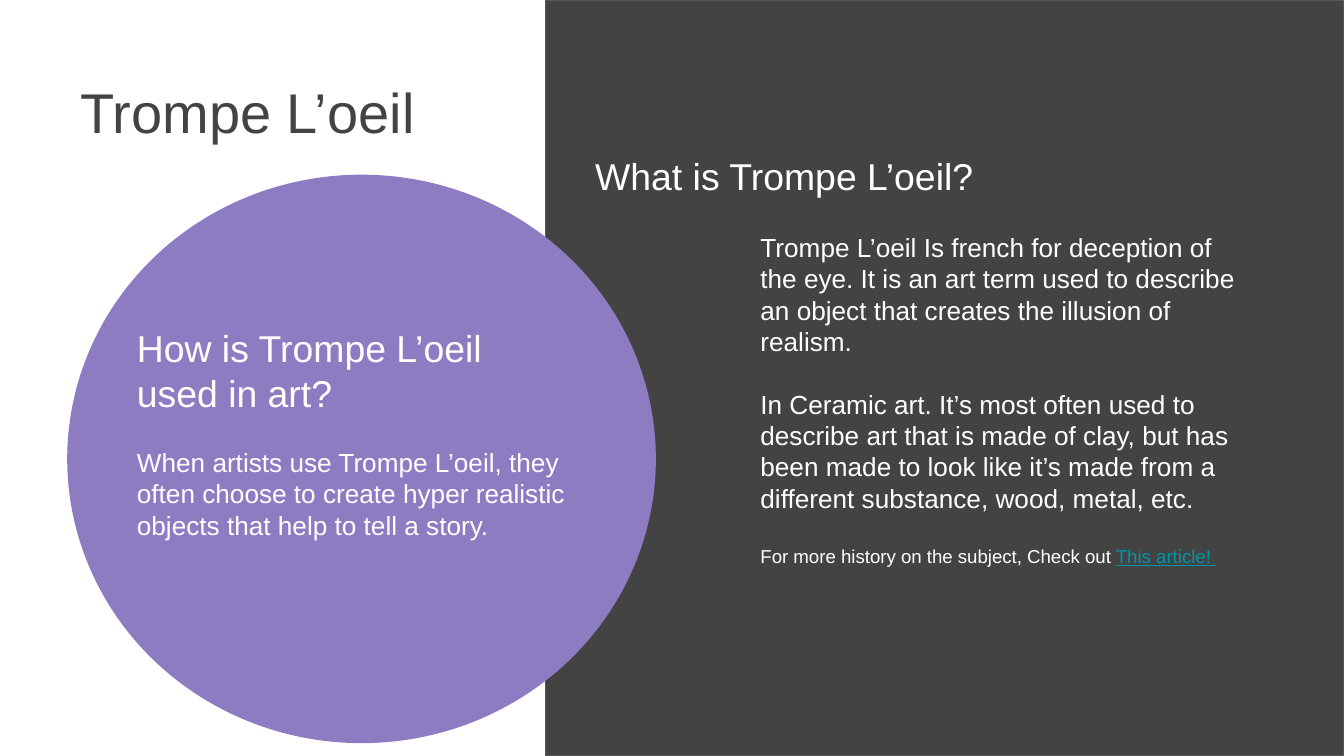
from pptx import Presentation
from pptx.dml.color import RGBColor
from pptx.enum.shapes import MSO_SHAPE as Shape
from pptx.enum.text import MSO_ANCHOR as Anchor, MSO_AUTO_SIZE as AutoSize, PP_ALIGN as Align
from pptx.util import Inches, Pt

COLORS = {
    "charcoal": "434343",
    "border": "595959",
    "violet": "8E7CC3",
    "white": "FFFFFF",
    "link": "0097A7",
}
SLIDE_WIDTH = 10
SLIDE_HEIGHT = SLIDE_WIDTH * 9 / 16
HEADING_SIZE, BODY_SIZE, NOTE_SIZE = 20, 14, 10
SECTION_GAP = 16.8


def rgb(name):
    """Return the named palette colour."""
    return RGBColor.from_string(COLORS[name])


def add_panel(slide, kind, box, fill, border=None):
    """Add a filled background shape with an optional thin border."""
    panel = slide.shapes.add_shape(kind, *map(Inches, box))
    panel.shadow.inherit = False
    panel.fill.solid()
    panel.fill.fore_color.rgb = rgb(fill)
    if border:
        panel.line.color.rgb = rgb(border)
        panel.line.width = Pt(0.75)
    else:
        panel.line.fill.background()


def style_run(run, size, color):
    """Set the font, size and colour of a run."""
    run.font.name = "Arial"
    run.font.size = Pt(size)
    run.font.color.rgb = rgb(color)


def fill_text(holder, paragraphs, color):
    """Write (text, size, space before) paragraphs into a shape."""
    frame = holder.text_frame
    frame.text = "\n".join(text for text, _, _ in paragraphs)
    frame.word_wrap = True
    frame.auto_size = AutoSize.NONE
    frame.vertical_anchor = Anchor.TOP
    frame.margin_left = frame.margin_right = Inches(0.1)
    frame.margin_top = frame.margin_bottom = Inches(0.1)
    for paragraph, (_, size, gap) in zip(frame.paragraphs, paragraphs):
        paragraph.alignment = Align.LEFT
        paragraph.line_spacing = 1.0
        paragraph.space_before = Pt(gap)
        for run in paragraph.runs:
            style_run(run, size, color)
    return frame


def add_text(slide, box, paragraphs):
    """Add a white text box and return its text frame."""
    return fill_text(slide.shapes.add_textbox(*map(Inches, box)), paragraphs, "white")


def set_title(slide, box, text):
    """Place and format the title placeholder."""
    title = slide.shapes.title
    title.left, title.top, title.width, title.height = map(Inches, box)
    fill_text(title, [(text, 30, 0)], "charcoal")


def main():
    """Build and save the slide."""
    deck = Presentation()
    deck.slide_width, deck.slide_height = Inches(SLIDE_WIDTH), Inches(SLIDE_HEIGHT)
    slide = deck.slides.add_slide(deck.slide_layouts[5])

    add_panel(slide, Shape.RECTANGLE, (4.06, 0, 5.94, SLIDE_HEIGHT), "charcoal", "border")
    add_panel(slide, Shape.OVAL, (0.5, 1.3, 4.38, 4.23), "violet")
    set_title(slide, (0.5, 0.48, 3.28, 1), "Trompe L’oeil")

    add_text(slide, (4.33, 1.04, 3.62, 0.44), [("What is Trompe L’oeil?", HEADING_SIZE, 0)])
    definition = add_text(slide, (5.56, 1.62, 3.84, 3.58), [
        ("Trompe L’oeil Is french for deception of the eye. It is an art term used to "
         "describe an object that creates the illusion of realism.", BODY_SIZE, 0),
        ("In Ceramic art. It’s most often used to describe art that is made of clay, but has "
         "been made to look like it’s made from a different substance, wood, metal, etc.",
         BODY_SIZE, SECTION_GAP),
        ("For more history on the subject, Check out ", NOTE_SIZE, SECTION_GAP),
    ])
    article = definition.paragraphs[-1].add_run()
    article.text = "This article! "
    style_run(article, NOTE_SIZE, "link")
    article.font.underline = True

    add_text(slide, (0.92, 2.32, 3.62, 2.08), [
        ("How is Trompe L’oeil", HEADING_SIZE, 0),
        ("used in art?", HEADING_SIZE, 0),
        ("When artists use Trompe L’oeil, they often choose to create hyper realistic "
         "objects that help to tell a story.", BODY_SIZE, SECTION_GAP),
    ])
    deck.save("out.pptx")


if __name__ == "__main__":
    main()
